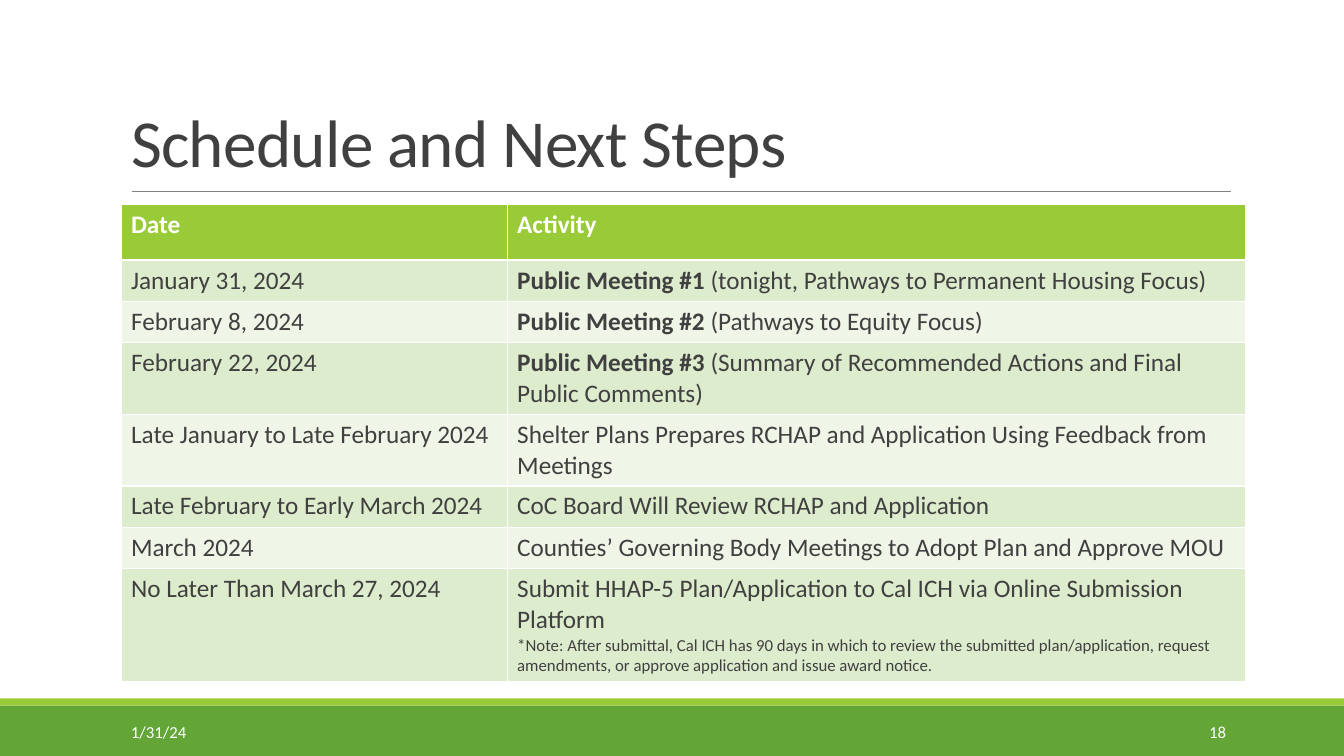
"""Build the schedule and next steps slide."""
from lxml.etree import SubElement
from pptx import Presentation
from pptx.dml.color import RGBColor
from pptx.enum.shapes import MSO_CONNECTOR, MSO_SHAPE
from pptx.enum.text import MSO_ANCHOR, PP_ALIGN
from pptx.oxml.ns import qn
from pptx.util import Inches, Pt

FONT = "Calibri"
WHITE = RGBColor(0xFF, 0xFF, 0xFF)
GREEN = RGBColor(0x63, 0xA5, 0x37)
LIME = RGBColor(0x99, 0xCB, 0x38)
BANDS = [RGBColor(0xDE, 0xEC, 0xCE), RGBColor(0xEF, 0xF6, 0xE8)]
GRAY = RGBColor(0x80, 0x80, 0x80)
INK = RGBColor(0x40, 0x40, 0x40)

SCHEDULE = [
    ("January 31, 2024", "Public Meeting #1 ",
     "(tonight, Pathways to Permanent Housing Focus)"),
    ("February 8, 2024", "Public Meeting #2 ", "(Pathways to Equity Focus)"),
    ("February 22, 2024", "Public Meeting #3 ",
     "(Summary of Recommended Actions and Final Public Comments)"),
    ("Late January to Late February 2024", "",
     "Shelter Plans Prepares RCHAP and Application Using Feedback from Meetings"),
    ("Late February to Early March 2024", "",
     "CoC Board Will Review RCHAP and Application"),
    ("March 2024", "",
     "Counties’ Governing Body Meetings to Adopt Plan and Approve MOU"),
    ("No Later Than March 27, 2024", "",
     "Submit HHAP-5 Plan/Application to Cal ICH via Online Submission Platform"),
]
NOTE = ("*Note: After submittal, Cal ICH has 90 days in which to review the "
        "submitted plan/application, request amendments, or approve "
        "application and issue award notice.")


def set_font(font, size, color, bold=None):
    font.name, font.size, font.bold = FONT, Pt(size), bold
    font.color.rgb = color


def add_band(slide, top, height, color):
    sp = slide.shapes.add_shape(MSO_SHAPE.RECTANGLE, 0, Inches(top),
                                Inches(13.33), Inches(height))
    sp.shadow.inherit = False
    sp.fill.solid()
    sp.fill.fore_color.rgb = color
    sp.line.fill.background()


def add_rule(slide, left, right, y):
    line = slide.shapes.add_connector(MSO_CONNECTOR.STRAIGHT, Inches(left),
                                      Inches(y), Inches(right), Inches(y))
    line.line.color.rgb = GRAY
    line.line.width = Pt(0.5)
    SubElement(line._element.spPr, qn("a:effectLst"))


def set_title(slide, text):
    title = slide.shapes.title
    title.left, title.top = Inches(1.2), Inches(0.67)
    title.width, title.height = Inches(10.44), Inches(1.18)
    tf = title.text_frame
    tf.vertical_anchor = MSO_ANCHOR.BOTTOM
    p = tf.paragraphs[0]
    p.alignment, p.line_spacing = PP_ALIGN.LEFT, 0.85
    r = p.add_run()
    r.text = text
    set_font(r.font, 48, INK)
    r._r.get_or_add_rPr().set("spc", "-50")


def add_footer(slide, left, width, text, align):
    box = slide.shapes.add_textbox(Inches(left), Inches(7.06),
                                   Inches(width), Inches(0.4))
    tf = box.text_frame
    tf.word_wrap = True
    tf.vertical_anchor = MSO_ANCHOR.MIDDLE
    p = tf.paragraphs[0]
    p.text, p.alignment = text, align
    set_font(p.font, 12, WHITE)


def fill_cell(cell, text, fill, color, bold=False, lead=""):
    cell.fill.solid()
    cell.fill.fore_color.rgb = fill
    p = cell.text_frame.paragraphs[0]
    for part, weight in ((lead, True), (text, bold)):
        if part:
            r = p.add_run()
            r.text = part
            set_font(r.font, 18, color, weight)


def add_schedule(slide):
    table = slide.shapes.add_table(len(SCHEDULE) + 1, 2, Inches(1.2),
                                   Inches(2.03), Inches(11.15),
                                   Inches(3.42)).table
    table.columns[0].width = Inches(3.83)
    table.columns[1].width = Inches(7.32)
    for row in table.rows:
        row.height = Inches(0.41)
    table.rows[0].height = Inches(0.55)
    for col, heading in enumerate(("Date", "Activity")):
        fill_cell(table.cell(0, col), heading, LIME, WHITE, bold=True)
    for i, (date, lead, activity) in enumerate(SCHEDULE):
        fill = BANDS[i % 2]
        fill_cell(table.cell(i + 1, 0), date, fill, INK)
        fill_cell(table.cell(i + 1, 1), activity, fill, INK, lead=lead)
    p = table.cell(len(SCHEDULE), 1).text_frame.add_paragraph()
    r = p.add_run()
    r.text = NOTE
    set_font(r.font, 12, INK)


def main():
    prs = Presentation()
    prs.slide_width, prs.slide_height = Inches(13.33), Inches(7.5)
    slide = prs.slides.add_slide(prs.slide_layouts[5])
    add_band(slide, 7, 0.5, GREEN)
    add_band(slide, 6.93, 0.07, LIME)
    add_rule(slide, 1.31, 12.21, 1.9)
    set_title(slide, "Schedule and Next Steps")
    add_schedule(slide)
    add_footer(slide, 10.83, 1.43, "18", PP_ALIGN.RIGHT)
    add_footer(slide, 1.2, 2.7, "1/31/24", PP_ALIGN.LEFT)
    prs.save("out.pptx")


if __name__ == "__main__":
    main()
